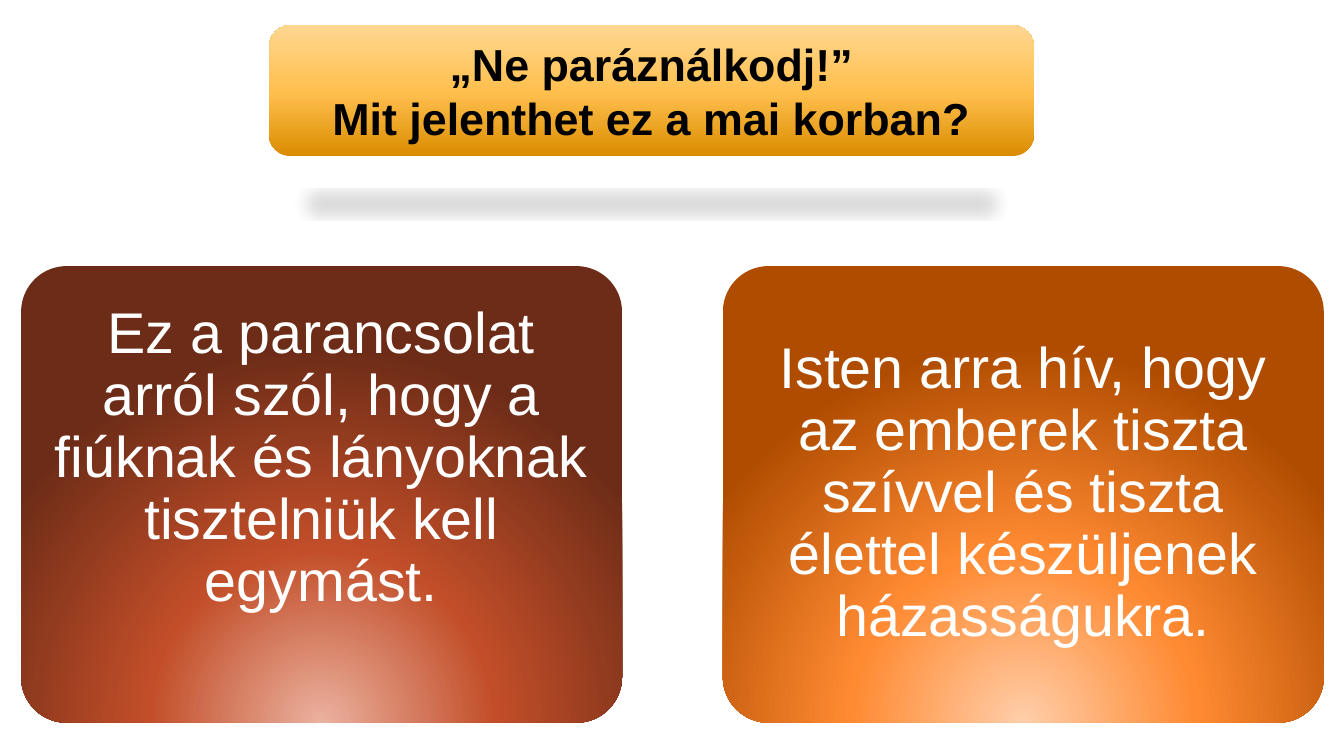
from lxml import etree
from pptx import Presentation
from pptx import util as u
from pptx.dml.color import RGBColor
from pptx.enum import shapes, text
from pptx.oxml.ns import qn

SLIDE_W, SLIDE_H = 13.33, 7.5
FONT = "Arial"
BLACK = RGBColor(0x00, 0x00, 0x00)
WHITE = RGBColor(0xFF, 0xFF, 0xFF)

# Gradients: (position in percent, colour)
GOLD = [(0, RGBColor(0xDA, 0x8C, 0x00)), (48, RGBColor(0xFF, 0xBF, 0x4D)),
        (100, RGBColor(0xFF, 0xD7, 0x91))]
BROWN = [(0, RGBColor(0xEB, 0xB1, 0x9F)), (46, RGBColor(0xC2, 0x4E, 0x29)),
         (100, RGBColor(0x6D, 0x2C, 0x17))]
ORANGE = [(0, RGBColor(0xFF, 0xCE, 0xA9)), (46, RGBColor(0xFF, 0x8A, 0x32)),
          (100, RGBColor(0xB0, 0x4C, 0x00))]

# Two equal columns of cards
CARD_LEFT, CARD_TOP = 0.21, 2.64
CARD_W, CARD_H = 5.96, 4.53
CARD_STEP = CARD_W + 1.0
CARD_INSET = 0.17
CARDS = [
    ("Ez a parancsolat arról szól, hogy a fiúknak és lányoknak "
     "tisztelniük kell egymást.", BROWN, 0.87),
    ("Isten arra hív, hogy az emberek tiszta szívvel és tiszta élettel "
     "készüljenek házasságukra.", ORANGE, CARD_INSET),
]
TITLE = "„Ne paráználkodj!”\nMit jelenthet ez a mai korban?"


def add(parent, tag, **attrs):
    return etree.SubElement(parent, qn(tag), {k: str(v) for k, v in attrs.items()})


def set_gradient(sp, stops, radial):
    sp.fill.gradient()
    grad = sp._element.spPr.find(qn("a:gradFill"))
    for child in list(grad):
        grad.remove(child)
    stop_list = add(grad, "a:gsLst")
    for pos, colour in stops:
        add(add(stop_list, "a:gs", pos=pos * 1000), "a:srgbClr", val=colour)
    if radial:  # centred below the lower edge
        add(add(grad, "a:path", path="circle"), "a:fillToRect",
            l=50000, t=130000, r=50000, b=-30000)
    else:  # from bottom to top
        add(grad, "a:lin", ang=270 * 60000, scaled=0)


def add_floor_shadow(sp):
    effects = sp._element.spPr.find(qn("a:effectLst"))
    shadow = add(effects, "a:outerShdw", blurRad=u.Pt(12), dist=u.Pt(25),
                 dir=90 * 60000, sx=90000, sy=-19000, rotWithShape=0)
    add(add(shadow, "a:srgbClr", val=BLACK), "a:alpha", val=15000)


def add_panel(slide, left, top, width, height, stops, radial=False):
    sp = slide.shapes.add_shape(
        shapes.MSO_SHAPE.ROUNDED_RECTANGLE,
        *(u.Inches(v) for v in (left, top, width, height)))
    sp.shadow.inherit = False
    sp.line.fill.background()
    set_gradient(sp, stops, radial)
    return sp


def set_text(sp, words, size, colour, bold=False):
    tf = sp.text_frame
    tf.text = words
    tf.word_wrap = True
    tf.vertical_anchor = text.MSO_ANCHOR.MIDDLE
    for p in tf.paragraphs:
        p.alignment = text.PP_ALIGN.CENTER
        for r in p.runs:
            r.font.name = FONT
            r.font.size = u.Pt(size)
            r.font.bold = bold
            r.font.color.rgb = colour
    return tf


def add_card(slide, column, words, stops, bottom_inset):
    sp = add_panel(slide, CARD_LEFT + column * CARD_STEP, CARD_TOP,
                   CARD_W, CARD_H, stops, radial=True)
    sp.adjustments[0] = 0.1
    tf = set_text(sp, words, 41, WHITE)
    tf.margin_left = tf.margin_right = tf.margin_top = u.Inches(CARD_INSET)
    tf.margin_bottom = u.Inches(bottom_inset)
    tf.paragraphs[0].line_spacing = 0.9


def add_title(slide):
    sp = add_panel(slide, 0.2 * SLIDE_W, 0.25, 7.59, 1.3, GOLD)
    add_floor_shadow(sp)
    set_text(sp, TITLE, 32, BLACK, bold=True)


def main():
    prs = Presentation()
    prs.slide_width, prs.slide_height = u.Inches(SLIDE_W), u.Inches(SLIDE_H)
    slide = prs.slides.add_slide(prs.slide_layouts[6])
    # Cards, then the title banner
    for column, card in enumerate(CARDS):
        add_card(slide, column, *card)
    add_title(slide)
    prs.save("out.pptx")


if __name__ == "__main__":
    main()
